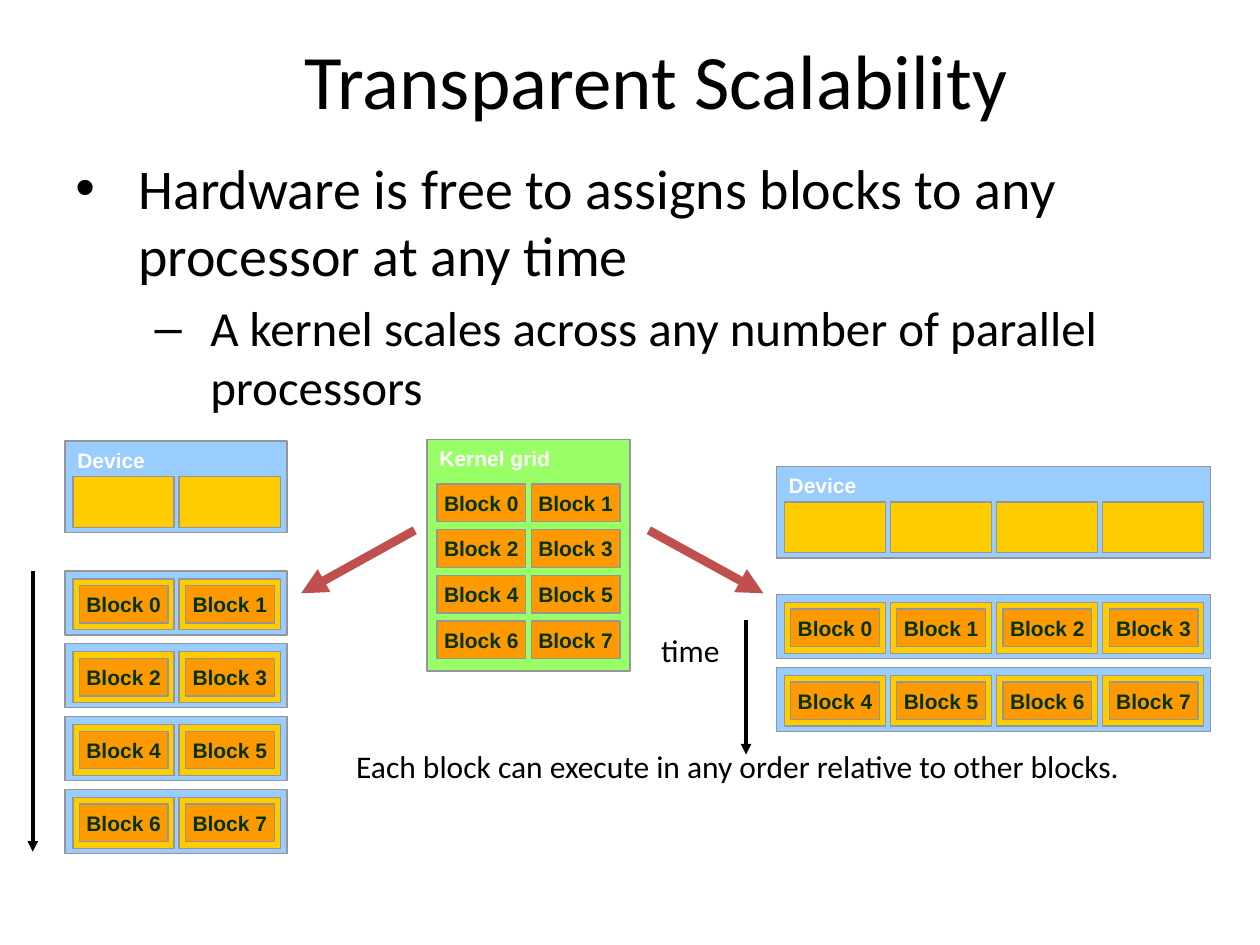
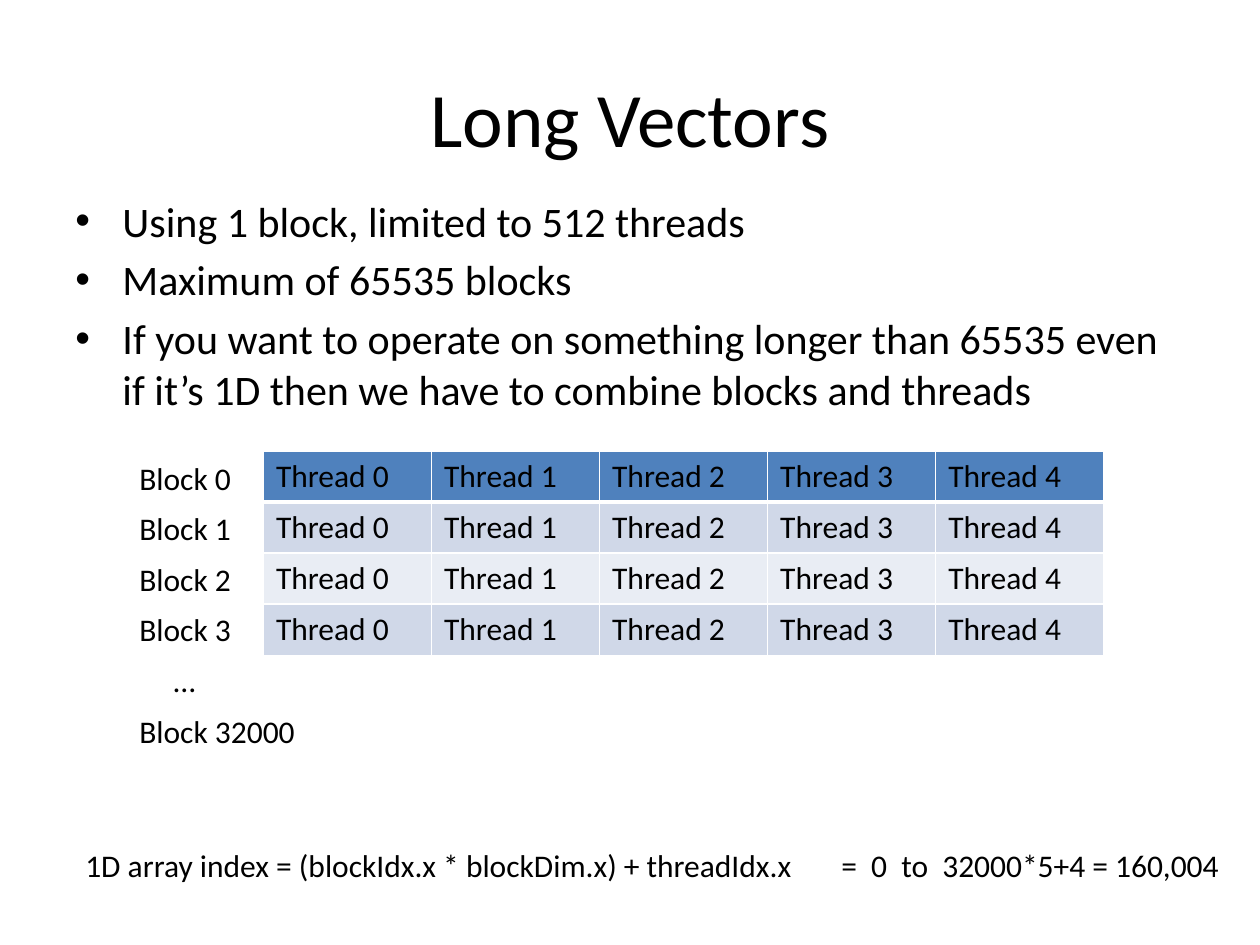
from lxml.etree import SubElement
from pptx import Presentation
from pptx.dml.color import RGBColor
from pptx.enum.shapes import MSO_CONNECTOR as Connector, MSO_SHAPE as Shape
from pptx.enum.text import MSO_ANCHOR as Anchor, PP_ALIGN as Align
from pptx.oxml.ns import qn
from pptx.util import Cm, Pt

BLACK, WHITE, GRAY = "000000", "FFFFFF", "969696"
DEVICE_BLUE, CORE_YELLOW, BLOCK_ORANGE = "99CCFF", "FFCC00", "FF9900"
GRID_GREEN, BLOCK_TEXT, RED = "99FF66", "003300", "C0504D"
HEADER_FILL, BAND_FILLS = "4F81BD", ("D0D8E8", "E9EDF4")

SCALING_TITLE = ("Transparent Scalability", (1.7, 0, 23.06, 3.18))
SCALING_BULLETS = [
    ("Hardware is free to assigns blocks to any processor at any time", 32, "•", 1.27, 1.27),
    ("A kernel scales across any number of parallel processors", 28, "–", 2.72, 1.12),
]
BLOCKS = [f"Block {number}" for number in range(8)]
DEVICES = [
    {"cores": 2, "left": 1.31, "top": 8.89, "rows_top": 11.51},
    {"cores": 4, "left": 15.65, "top": 9.4, "rows_top": 11.99},
]
ARROWS = [
    ((0.66, 11.51), (0.66, 17.17), BLACK, 2),
    ((15.04, 12.5), (15.04, 15.21), BLACK, 2),
    ((8.36, 10.69), (6.07, 11.96), RED, 5),
    ((13.08, 10.69), (15.39, 11.96), RED, 5),
]
ORDER_NOTE = "Each block can execute in any order relative to other blocks."

VECTORS_TITLE = ("Long Vectors", (1.27, 0.76, 22.86, 3.18))
VECTORS_BULLETS = [
    (text, 24, "•", 0.95, 0.95)
    for text in (
        "Using 1 block, limited to 512 threads",
        "Maximum of 65535 blocks",
        "If you want to operate on something longer than 65535 even if it’s 1D "
        "then we have to combine blocks and threads",
    )
]
THREADS = [f"Thread {number}" for number in range(5)]
ROW_LABELS = BLOCKS[:4] + ["…", "Block 32000"]
INDEX_FORMULA = "1D array index = (blockIdx.x * blockDim.x) + threadIdx.x\t=  0  to  32000*5+4 = 160,004"

CORE_SIZE, CORE_PITCH = (2.04, 1.02), 2.14
BLOCK_SIZE = (1.79, 0.76)
ROW_HEIGHT, ROW_PITCH = 1.29, 1.47


def color(code):
    return RGBColor.from_string(code)


def style(para, size, code=BLACK, font="Calibri", bold=False):
    para.font.size = Pt(size)
    para.font.name = font
    para.font.bold = bold
    para.font.color.rgb = color(code)


def add_text(page, text, area, size=18, wrap=False):
    box = page.shapes.add_textbox(*map(Cm, area))
    frame = box.text_frame
    frame.word_wrap = wrap
    frame.text = text
    style(frame.paragraphs[0], size)
    return frame


def add_title(page, text, area):
    frame = add_text(page, text, area, 44, True)
    frame.vertical_anchor = Anchor.MIDDLE
    frame.paragraphs[0].alignment = Align.CENTER


def add_bullets(page, bullets, area):
    frame = page.shapes.add_textbox(*map(Cm, area)).text_frame
    frame.word_wrap = True
    for position, (text, size, mark, indent, hang) in enumerate(bullets):
        para = frame.add_paragraph() if position else frame.paragraphs[0]
        para.text = text
        para.space_before = Pt(size * 0.2)
        props = para._p.get_or_add_pPr()
        props.set("marL", str(Cm(indent)))
        props.set("indent", str(-Cm(hang)))
        SubElement(props, qn("a:buFont"), typeface="Arial")
        SubElement(props, qn("a:buChar"), char=mark)
        style(para, size)


def add_box(page, left, top, size, fill, heading=""):
    box = page.shapes.add_shape(Shape.RECTANGLE, *map(Cm, (left, top, *size)))
    box.shadow.inherit = False
    box.fill.solid()
    box.fill.fore_color.rgb = color(fill)
    box.line.color.rgb = color(GRAY)
    box.line.width = Pt(0.75)
    if heading:
        frame = box.text_frame
        frame.text = heading
        frame.vertical_anchor = Anchor.TOP
        frame.paragraphs[0].alignment = Align.LEFT
        style(frame.paragraphs[0], 12, WHITE, "Arial", True)
    return box


def add_block(page, left, top, label):
    frame = add_box(page, left, top, BLOCK_SIZE, BLOCK_ORANGE).text_frame
    frame.word_wrap = False
    frame.text = label
    frame.vertical_anchor = Anchor.MIDDLE
    frame.paragraphs[0].alignment = Align.CENTER
    style(frame.paragraphs[0], 12, BLOCK_TEXT, "Arial", True)


def add_device(page, cores, left, top, rows_top):
    width = cores * CORE_PITCH + 0.2
    add_box(page, left, top, (width, 1.85), DEVICE_BLUE, "Device")
    core_lefts = [left + 0.16 + core * CORE_PITCH for core in range(cores)]
    for core_left in core_lefts:
        add_box(page, core_left, top + 0.72, CORE_SIZE, CORE_YELLOW)
    for row in range(len(BLOCKS) // cores):
        row_top = rows_top + row * ROW_PITCH
        add_box(page, left, row_top, (width, ROW_HEIGHT), DEVICE_BLUE)
        for core_left, label in zip(core_lefts, BLOCKS[row * cores:]):
            add_box(page, core_left, row_top + 0.16, CORE_SIZE, CORE_YELLOW)
            add_block(page, core_left + 0.13, row_top + 0.29, label)


def add_kernel_grid(page, left, top):
    add_box(page, left, top, (4.09, 4.67), GRID_GREEN, "Kernel grid")
    for number, label in enumerate(BLOCKS):
        row, column = divmod(number, 2)
        add_block(page, left + 0.2 + column * 1.9, top + 0.9 + row * 0.92, label)


def add_arrow(page, start, end, code, width):
    arrow = page.shapes.add_connector(Connector.STRAIGHT, *map(Cm, start + end))
    arrow.line.color.rgb = color(code)
    arrow.line.width = Pt(width)
    props = arrow._element.spPr
    SubElement(props.find(qn("a:ln")), qn("a:tailEnd"), type="triangle")
    SubElement(props, qn("a:effectLst"))


def add_borders(cell, widths):
    props = cell._tc.get_or_add_tcPr()
    for side, width in zip("LRTB", widths):
        line = SubElement(props, qn(f"a:ln{side}"), w=str(Pt(width)))
        SubElement(SubElement(line, qn("a:solidFill")), qn("a:srgbClr"), val=WHITE)


def add_thread_table(page, rows, area):
    table = page.shapes.add_table(rows, len(THREADS), *map(Cm, area)).table
    table.first_row = table.horz_banding = False
    for row in range(rows):
        fill = BAND_FILLS[(row - 1) % 2] if row else HEADER_FILL
        for column, label in enumerate(THREADS):
            cell = table.cell(row, column)
            cell.text = label
            style(cell.text_frame.paragraphs[0], 18)
            add_borders(cell, (1, 1, 3 if row == 1 else 1, 3 if row == 0 else 1))
            cell.fill.solid()
            cell.fill.fore_color.rgb = color(fill)


def build_scaling(page):
    add_title(page, *SCALING_TITLE)
    add_bullets(page, SCALING_BULLETS, (1.27, 2.97, 22.86, 15.54))
    for device in DEVICES:
        add_device(page, **device)
    add_kernel_grid(page, 8.61, 8.86)
    for arrow in ARROWS:
        add_arrow(page, *arrow)
    add_text(page, ORDER_NOTE, (6.93, 14.94, 17.6, 2.29), wrap=True)
    add_text(page, "time", (13.08, 12.6, 2.01, 1.02))


def build_vectors(page):
    add_title(page, *VECTORS_TITLE)
    add_bullets(page, VECTORS_BULLETS, (1.27, 3.81, 22.86, 5.72))
    add_thread_table(page, 4, (5.31, 9.09, 16.94, 4.12))
    for row, label in enumerate(ROW_LABELS):
        left, width = (3.25, 0.97) if label == "…" else (2.56, 3.68 if len(label) > 7 else 2.39)
        add_text(page, label, (left, 9.12 + row * 1.02, width, 1.02))
    add_text(page, INDEX_FORMULA, (1.47, 16.94, 23.62, 1.02))


def main():
    """Build the two slides on block scheduling and long vectors."""
    deck = Presentation()
    deck.slide_width, deck.slide_height = Cm(25.4), Cm(19.05)
    for build in (build_scaling, build_vectors):
        build(deck.slides.add_slide(deck.slide_layouts[6]))
    deck.save("out.pptx")


if __name__ == "__main__":
    main()
